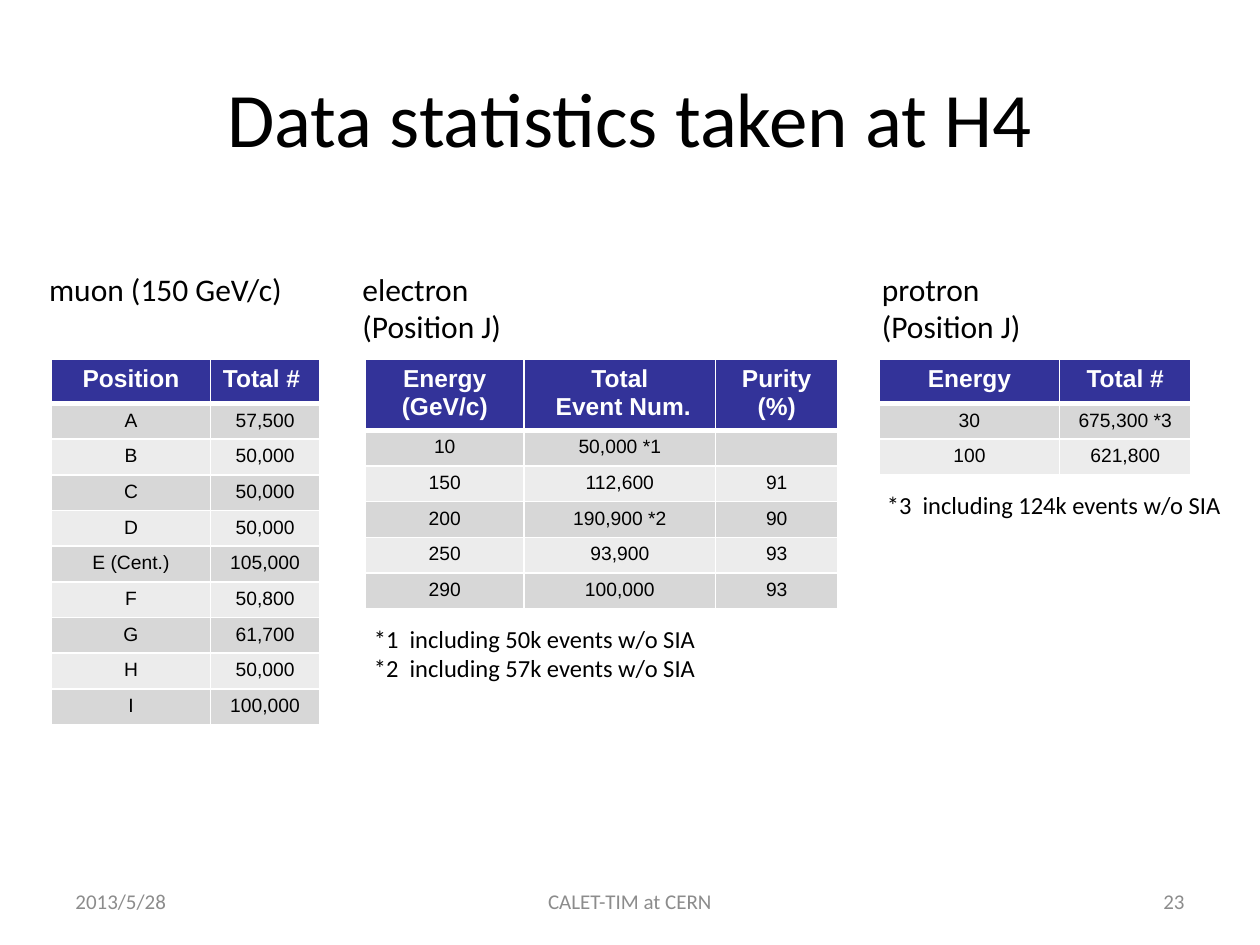
"""Build the slide of beam test data statistics."""
from dataclasses import dataclass

from lxml.etree import SubElement
from pptx import Presentation
from pptx.dml.color import RGBColor as Color
from pptx.enum.text import MSO_ANCHOR as Anchor, PP_ALIGN as Align
from pptx.oxml.ns import qn
from pptx.util import Pt


@dataclass(frozen=True)
class Theme:
    """Colours, fonts and type sizes."""
    text_font: str = "Calibri"
    table_font: str = "Arial"
    black: str = "000000"
    white: str = "FFFFFF"
    grey: str = "8C8C8C"
    header_fill: str = "333399"
    row_fills: tuple = ("D7D7D7", "ECECEC")
    title_size: float = 44
    label_size: float = 18
    note_size: float = 14
    footer_size: float = 12
    header_size: float = 14
    cell_size: float = 11
    thin_line: float = 1
    thick_line: float = 3


@dataclass(frozen=True)
class Label:
    """A text box and its type."""
    text: str
    left: float
    top: float
    width: float
    height: float
    size: float
    color: str = "000000"
    align: Align = Align.LEFT
    anchor: Anchor = Anchor.TOP
    wrap: bool = False


@dataclass(frozen=True)
class DataTable:
    """A header row over banded data rows."""
    left: float
    widths: tuple
    header_height: float
    rows: tuple
    left_headers: tuple = ()


THEME = Theme()
TABLE_TOP = 205.2
ROW_HEIGHT = 20.4
LABEL_TOP, FOOTER_TOP = 150.5, 500.5

TABLES = (
    DataTable(29.5, (90.7, 62.6), 25.4, (
        ("Position", "Total #"), ("A", "57,500"), ("B", "50,000"),
        ("C", "50,000"), ("D", "50,000"), ("E (Cent.)", "105,000"),
        ("F", "50,800"), ("G", "61,700"), ("H", "50,000"), ("I", "100,000"),
    ), left_headers=(1,)),
    DataTable(208.8, (90.7, 109.5, 69.8), 40.7, (
        ("Energy\n(GeV/c)", "Total\n Event Num.", "Purity\n(%)"),
        ("10", "50,000 *1", ""), ("150", "112,600", "91"),
        ("200", "190,900 *2", "90"), ("250", "93,900", "93"),
        ("290", "100,000", "93"),
    )),
    DataTable(502.6, (102.7, 75.4), 25.4, (
        ("Energy", "Total #"), ("30", "675,300 *3"), ("100", "621,800"),
    )),
)


def heading(text: str, left: float, width: float, height: float) -> Label:
    """Return the label above a table."""
    return Label(text, left, LABEL_TOP, width, height, THEME.label_size)


def note(text: str, left: float, top: float, width: float, height: float) -> Label:
    """Return a note below a table."""
    return Label(text, left, top, width, height, THEME.note_size)


def footer(text: str, left: float, width: float, align: Align) -> Label:
    """Return a footer entry."""
    return Label(text, left, FOOTER_TOP, width, 28.8, THEME.footer_size,
                 THEME.grey, align, Anchor.MIDDLE, True)


LABELS = (
    heading("muon (150 GeV/c)", 21, 149, 29),
    heading("electron\n(Position J)", 200, 95, 51),
    heading("protron\n(Position J)", 496.8, 95, 51),
    note("*1  including 50k events w/o SIA\n*2  including 57k events w/o SIA",
         206.6, 352.8, 199.4, 41),
    note("*3  including 124k events w/o SIA", 499.7, 276.5, 206.6, 24.5),
    footer("2013/5/28", 36, 168, Align.LEFT),
    footer("CALET-TIM at CERN", 246, 228, Align.CENTER),
    footer("23", 516, 168, Align.RIGHT),
)


def write(frame, text: str, font: str, size: float, color: str,
          align: Align, bold: bool = False) -> None:
    """Fill a text frame with evenly formatted paragraphs."""
    frame.text = text
    for para in frame.paragraphs:
        para.alignment = align
        para.font.name = font
        para.font.size = Pt(size)
        para.font.bold = bold
        para.font.color.rgb = Color.from_string(color)
        if not text:
            SubElement(para._p, qn("a:endParaRPr"), sz=str(int(size * 100)))


def add_label(page, label: Label) -> None:
    """Draw a text box."""
    box = page.shapes.add_textbox(Pt(label.left), Pt(label.top),
                                  Pt(label.width), Pt(label.height))
    frame = box.text_frame
    frame.word_wrap = label.wrap
    frame.vertical_anchor = label.anchor
    write(frame, label.text, THEME.text_font, label.size, label.color, label.align)


def add_borders(cell, row: int) -> None:
    """Draw white cell borders, thick between header and data."""
    top = THEME.thick_line if row == 1 else THEME.thin_line
    bottom = THEME.thick_line if row == 0 else THEME.thin_line
    properties = cell._tc.get_or_add_tcPr()
    for side, width in (("L", THEME.thin_line), ("R", THEME.thin_line),
                        ("T", top), ("B", bottom)):
        line = SubElement(properties, qn(f"a:ln{side}"), w=str(Pt(width)))
        fill = SubElement(line, qn("a:solidFill"))
        SubElement(fill, qn("a:srgbClr"), val=THEME.white)


def add_data_table(page, data: DataTable) -> None:
    """Draw a table with a dark header and banded rows."""
    heights = [data.header_height] + [ROW_HEIGHT] * (len(data.rows) - 1)
    table = page.shapes.add_table(
        len(data.rows), len(data.widths), Pt(data.left), Pt(TABLE_TOP),
        Pt(sum(data.widths)), Pt(sum(heights))).table
    for column, width in zip(table.columns, data.widths):
        column.width = Pt(width)
    for row, (height, texts) in enumerate(zip(heights, data.rows)):
        table.rows[row].height = Pt(height)
        is_header = row == 0
        fill = THEME.header_fill if is_header else THEME.row_fills[(row - 1) % 2]
        size = THEME.header_size if is_header else THEME.cell_size
        color = THEME.white if is_header else THEME.black
        for column, text in enumerate(texts):
            cell = table.cell(row, column)
            add_borders(cell, row)
            cell.fill.solid()
            cell.fill.fore_color.rgb = Color.from_string(fill)
            is_left = is_header and column in data.left_headers
            write(cell.text_frame, text, THEME.table_font, size, color,
                  Align.LEFT if is_left else Align.CENTER, is_header)


def main() -> None:
    """Build and save the deck."""
    deck = Presentation()
    deck.slide_width, deck.slide_height = Pt(720), Pt(540)
    page = deck.slides.add_slide(deck.slide_layouts[5])
    title = page.shapes.title
    title.left, title.top, title.width, title.height = Pt(36), Pt(21.6), Pt(648), Pt(90)
    title.text_frame.vertical_anchor = Anchor.MIDDLE
    write(title.text_frame, "Data statistics taken at H4", THEME.text_font,
          THEME.title_size, THEME.black, Align.CENTER)
    for data in TABLES:
        add_data_table(page, data)
    for label in LABELS:
        add_label(page, label)
    deck.save("out.pptx")


if __name__ == "__main__":
    main()
